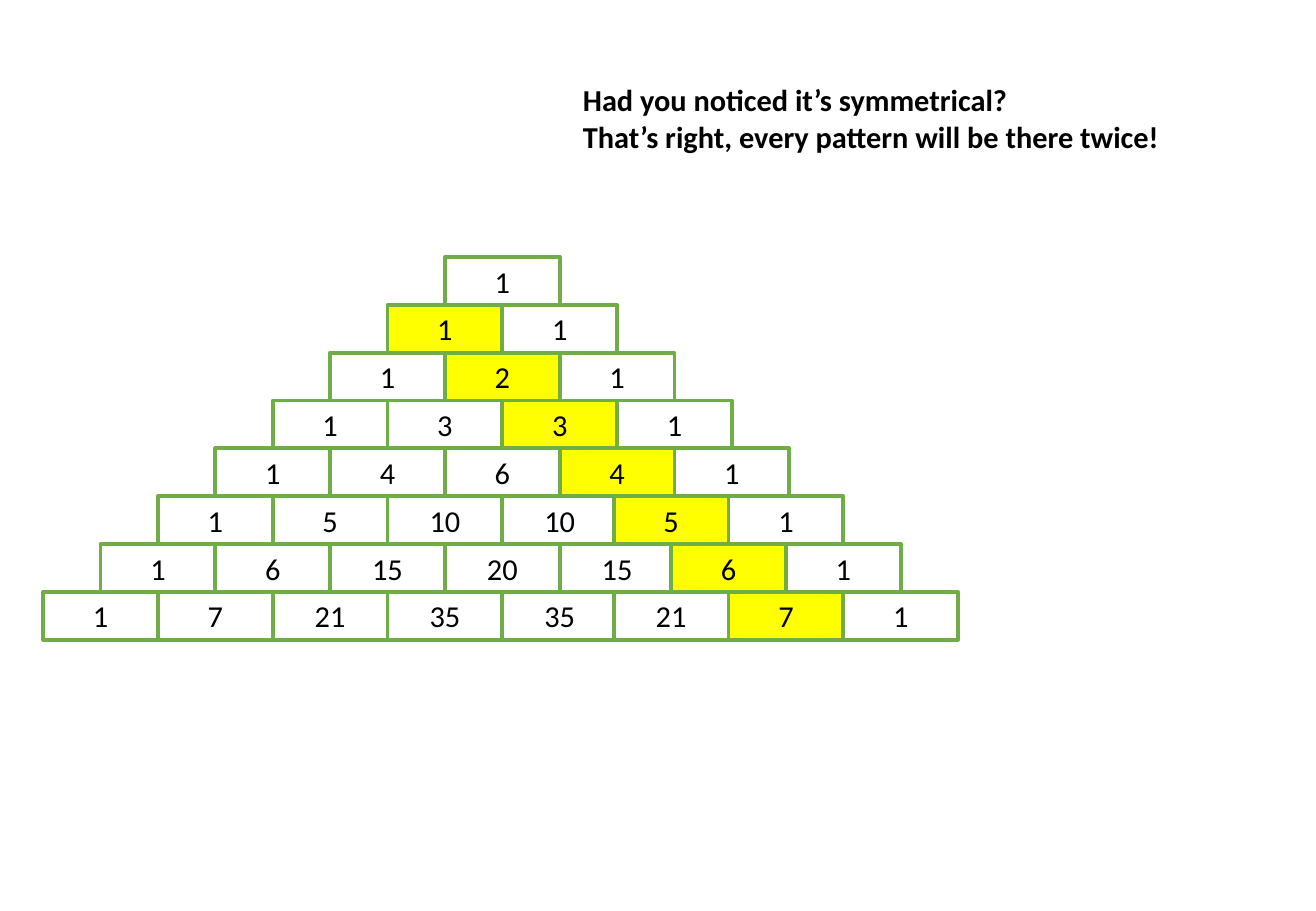
from math import comb

from pptx import Presentation
from pptx.dml.color import RGBColor
from pptx.enum.shapes import MSO_SHAPE
from pptx.enum.text import MSO_ANCHOR, MSO_AUTO_SIZE, PP_ALIGN
from pptx.util import Pt

RECTANGLE = MSO_SHAPE.RECTANGLE
MIDDLE = MSO_ANCHOR.MIDDLE
CENTER = PP_ALIGN.CENTER
LEFT = PP_ALIGN.LEFT
GROW = MSO_AUTO_SIZE.SHAPE_TO_FIT_TEXT

WHITE = RGBColor(0xFF, 0xFF, 0xFF)
YELLOW = RGBColor(0xFF, 0xFF, 0x00)
GREEN = RGBColor(0x70, 0xAD, 0x47)
BLACK = RGBColor(0x00, 0x00, 0x00)

ROWS = 8
APEX_LEFT, APEX_TOP = 263.75, 152.4
BRICK_WIDTH, BRICK_HEIGHT = 68.04, 28.35
LOWER_ROW = 5
RIGHT_NUDGE = 2

NUMBER_FORMAT = {"name": "Calibri", "size": Pt(18), "bold": False}
MESSAGE_FORMAT = {"name": "Calibri", "size": Pt(18), "bold": True}
MESSAGE = [
    "Had you noticed it’s symmetrical?",
    "That’s right, every pattern will be there twice!",
]


def write_line(para, text, font_format, alignment):
    para.alignment = alignment
    span = para.add_run()
    span.text = text
    for name, value in font_format.items():
        setattr(span.font, name, value)
    span.font.color.rgb = BLACK


def add_brick(page, left, top, number, fill):
    brick = page.shapes.add_shape(
        RECTANGLE, Pt(left), Pt(top), Pt(BRICK_WIDTH), Pt(BRICK_HEIGHT)
    )
    brick.shadow.inherit = False
    brick.fill.solid()
    brick.fill.fore_color.rgb = fill
    brick.line.color.rgb = GREEN
    brick.line.width = Pt(2.25)
    brick.text_frame.vertical_anchor = MIDDLE
    write_line(brick.text_frame.paragraphs[0], str(number), NUMBER_FORMAT, CENTER)


def add_triangle(page):
    for row in range(ROWS):
        row_left = APEX_LEFT - row * BRICK_WIDTH / 2
        top = APEX_TOP + row * BRICK_HEIGHT
        for column in range(row + 1):
            left = row_left + column * BRICK_WIDTH
            if row >= LOWER_ROW and column > row // 2 + 1:
                left -= RIGHT_NUDGE
            fill = YELLOW if column == row - 1 else WHITE
            add_brick(page, left, top, comb(row, column), fill)


def add_message(page, left, top, width, height, lines):
    box = page.shapes.add_textbox(Pt(left), Pt(top), Pt(width), Pt(height))
    frame = box.text_frame
    frame.word_wrap = True
    frame.auto_size = GROW
    for index, text in enumerate(lines):
        para = frame.add_paragraph() if index else frame.paragraphs[0]
        write_line(para, text, MESSAGE_FORMAT, LEFT)


def main():
    deck = Presentation()
    deck.slide_width, deck.slide_height = Pt(780), Pt(540)
    page = deck.slides.add_slide(deck.slide_layouts[6])
    add_triangle(page)
    add_message(page, 338.4, 44.64, 390.24, 51.12, MESSAGE)
    deck.save("out.pptx")


if __name__ == "__main__":
    main()
